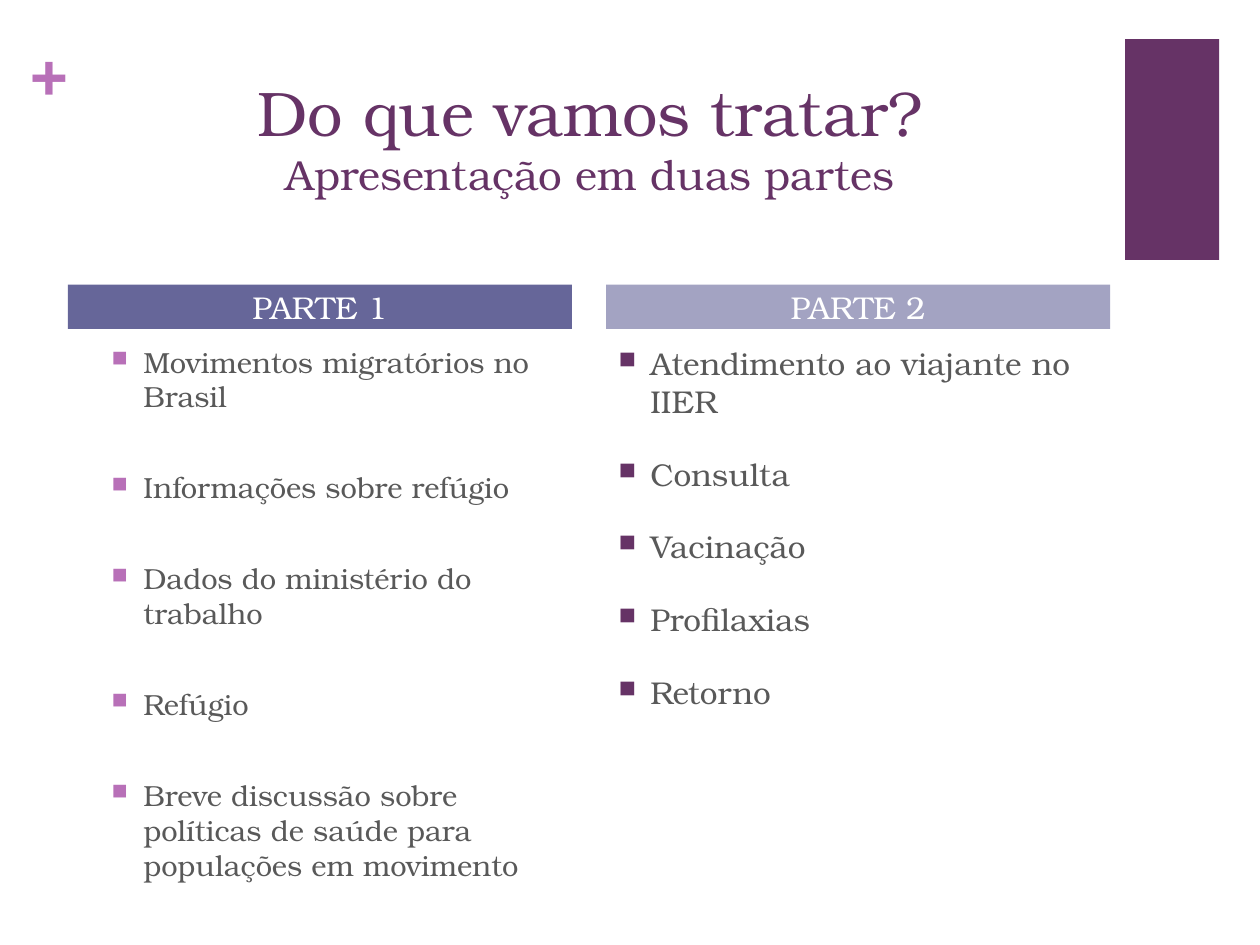
from dataclasses import dataclass

from lxml import etree
from pptx import Presentation
from pptx.dml.color import RGBColor
from pptx.enum.shapes import MSO_SHAPE
from pptx.enum.text import MSO_ANCHOR, PP_ALIGN
from pptx.oxml.ns import qn
from pptx.util import Cm, Pt

RECT = MSO_SHAPE.RECTANGLE
CENTER = PP_ALIGN.CENTER
MIDDLE = MSO_ANCHOR.MIDDLE


@dataclass(frozen=True)
class Theme:
    """Colours, font and type sizes of the slide."""

    font: str = "TeX Gyre Bonum"
    plum: str = "663366"
    pink: str = "B870B8"
    slate: str = "666699"
    mist: str = "A3A3C2"
    gray: str = "595959"
    white: str = "FFFFFF"
    big: float = 36
    mid: float = 24
    body: float = 18
    small: float = 16.6


@dataclass(frozen=True)
class Style:
    """Look of one bullet list: size, bullet colour, indent and gap."""

    size: float
    mark: str
    left: float
    gap: float


THEME = Theme()
PARTS = (
    ("PARTE 1", THEME.slate, Style(THEME.small, THEME.pink, 1.27, 32), (
        "Movimentos migratórios no Brasil",
        "Informações sobre refúgio",
        "Dados do ministério do trabalho",
        "Refúgio",
        "Breve discussão sobre políticas de saúde para populações em movimento",
    )),
    ("PARTE 2", THEME.mist, Style(THEME.body, THEME.plum, 0.64, 20), (
        "Atendimento ao viajante no IIER",
        "Consulta",
        "Vacinação",
        "Profilaxias",
        "Retorno",
    )),
)


def set_font(para, size, color, bold=False):
    """Set the font of a paragraph."""
    font = para.font
    font.name, font.size, font.bold = THEME.font, Pt(size), bold
    font.color.rgb = RGBColor.from_string(color)


def add_lines(frame, lines):
    """Fill a text frame with lines and return the paragraphs."""
    frame.text = "\n".join(lines)
    return frame.paragraphs


def add_text(slide, box):
    """Add a wrapping text box and return its frame."""
    frame = slide.shapes.add_textbox(*map(Cm, box)).text_frame
    frame.word_wrap = True
    return frame


def add_block(slide, box, color):
    """Add a plain filled rectangle."""
    block = slide.shapes.add_shape(RECT, *map(Cm, box))
    block.shadow.inherit = False
    block.fill.solid()
    block.fill.fore_color.rgb = RGBColor.from_string(color)
    block.line.fill.background()
    return block


def add_bullet(para, style):
    """Give a paragraph a square bullet with a hanging indent."""
    props = para._p.get_or_add_pPr()
    props.set("marL", str(Cm(style.left)))
    props.set("indent", str(-Cm(0.64)))
    tint = etree.SubElement(props, qn("a:buClr"))
    etree.SubElement(tint, qn("a:srgbClr"), val=style.mark)
    etree.SubElement(props, qn("a:buSzPct"), val="75000")
    etree.SubElement(props, qn("a:buChar"), char="■")


def add_decor(slide, box):
    """Add the corner plus sign and the side block."""
    left, top, width, _ = box
    add_block(slide, (left + width - 2.72, top + 0.79, 1.9, 4.45), THEME.plum)
    frame = add_text(slide, (left + 0.61, top + 0.64, 0.74, 1.55))
    frame.word_wrap = False
    frame.margin_left = frame.margin_right = 0
    frame.margin_top = frame.margin_bottom = 0
    set_font(add_lines(frame, ["+"])[0], THEME.big, THEME.pink, True)


def add_title(slide, box):
    """Add the centred title and its second line."""
    lines = ("Do que vamos tratar?", "Apresentação em duas partes")
    paras = add_lines(add_text(slide, box), lines)
    for para, size in zip(paras, (THEME.big, THEME.mid)):
        para.alignment = CENTER
        set_font(para, size, THEME.plum)


def add_part(slide, box, part):
    """Add one column: a heading bar over a bullet list."""
    left, top, width, height = box
    head, color, style, items = part
    frame = add_block(slide, (left, top, width, 0.89), color).text_frame
    frame.margin_top = frame.margin_bottom = 0
    frame.vertical_anchor = MIDDLE
    para = add_lines(frame, [head])[0]
    para.alignment = CENTER
    set_font(para, THEME.body, THEME.white)

    body = add_text(slide, (left, top + 1.07, width, height - 1.07))
    for index, para in enumerate(add_lines(body, items)):
        para.space_before = Pt(style.gap if index else 0)
        add_bullet(para, style)
        set_font(para, style.size, THEME.gray)


def main():
    """Build and save the slide."""
    deck = Presentation()
    deck.slide_width, deck.slide_height = Cm(25.4), Cm(19.05)
    slide = deck.slides.add_slide(deck.slide_layouts[6])
    add_decor(slide, (0, 0, 25.4, 19.05))
    add_title(slide, (1.4, 1.35, 20.98, 3.1))
    for index, part in enumerate(PARTS):
        add_part(slide, (1.37 + index * 10.85, 5.74, 10.16, 11.28), part)
    deck.save("out.pptx")


if __name__ == "__main__":
    main()
